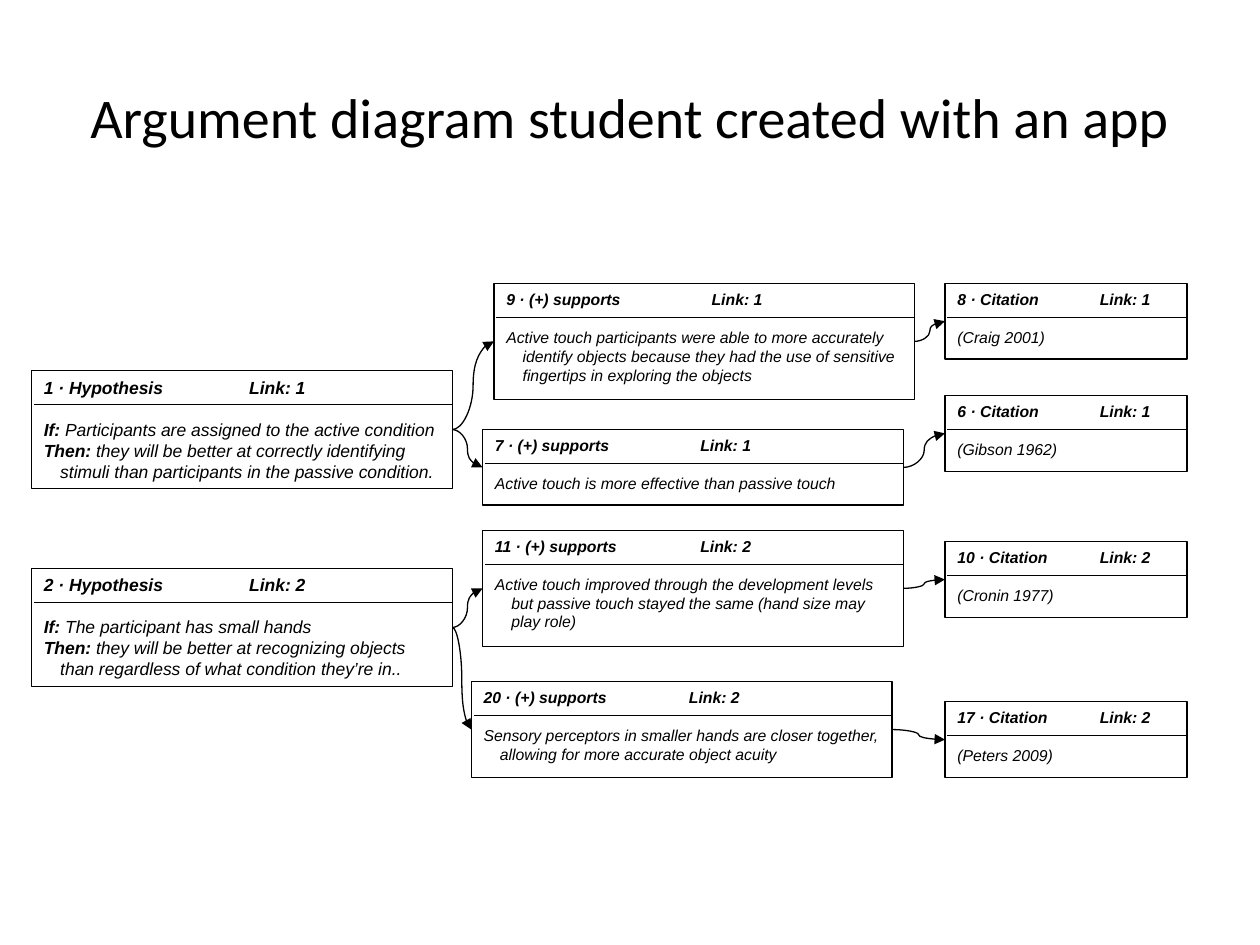
from dataclasses import dataclass

from lxml import etree
from pptx import Presentation
from pptx import util as u
from pptx.dml.color import RGBColor
from pptx.enum import shapes, text
from pptx.oxml import ns


@dataclass(frozen=True)
class Theme:
    ink: RGBColor = RGBColor(0, 0, 0)
    title_font: str = "Calibri"
    body_font: str = "Arial"
    title_size: int = 32
    hypothesis_size: int = 10
    detail_size: int = 9
    leading: float = 1.2
    line: float = 0.75


theme = Theme()


def write(para, words, *, size, font=theme.body_font, bold=False, italic=False):
    span = para.add_run()
    span.text = words
    span.font.name = font
    span.font.size = u.Pt(size)
    span.font.bold = bold
    span.font.italic = italic
    span.font.color.rgb = theme.ink


def draw_line(kind, left, top, right, bottom):
    line = page.shapes.add_connector(
        kind, u.Inches(left), u.Inches(top), u.Inches(right), u.Inches(bottom))
    line.line.color.rgb = theme.ink
    line.line.width = u.Pt(theme.line)
    etree.SubElement(line._element.spPr, ns.qn("a:effectLst"))
    return line


deck = Presentation()
deck.slide_width, deck.slide_height = u.Inches(10), u.Inches(7.5)
page = deck.slides.add_slide(deck.slide_layouts[5])

title = page.shapes.title
title.left, title.top = u.Inches(0.5), u.Inches(0.3)
title.width, title.height = u.Inches(9), u.Inches(1.25)
title.text_frame.vertical_anchor = text.MSO_ANCHOR.MIDDLE
heading = title.text_frame.paragraphs[0]
heading.alignment = text.PP_ALIGN.CENTER
write(heading, "Argument diagram student created with an app",
      size=theme.title_size, font=theme.title_font)

WIDE, NARROW = 3.34, 1.92
HEADER, DIVIDER_INSET, HANG = 0.27, 0.02, 0.13
CITATION_LEFT, CITATION_HEIGHT = 7.5, 0.6

hypotheses = [
    (1, 2.94, "Participants are assigned to the active condition",
     "they will be better at correctly identifying stimuli than participants in the passive condition."),
    (2, 4.51, "The participant has small hands",
     "they will be better at recognizing objects than regardless of what condition they’re in.."),
]
supports = [
    (9, 1, 3.92, 2.25, 0.92,
     "Active touch participants were able to more accurately identify objects because they had the use of sensitive fingertips in exploring the objects"),
    (7, 1, 3.83, 3.41, 0.6, "Active touch is more effective than passive touch"),
    (11, 2, 3.83, 4.21, 0.92,
     "Active touch improved through the development levels but passive touch stayed the same (hand size may play role)"),
    (20, 2, 3.74, 5.41, 0.76,
     "Sensory perceptors in smaller hands are closer together, allowing for more accurate object acuity"),
]
citations = [
    (8, 1, 2.25, "(Craig 2001)"),
    (6, 1, 3.14, "(Gibson 1962)"),
    (10, 2, 4.3, "(Cronin 1977)"),
    (17, 2, 5.57, "(Peters 2009)"),
]

cards = []
for number, top, condition, outcome in hypotheses:
    cards.append((number, f"{number} · Hypothesis\t\tLink: {number}", 0.25, top, WIDE, 0.94,
                  theme.hypothesis_size, [("If: ", condition), ("Then: ", outcome)]))
for number, link, left, top, height, claim in supports:
    cards.append((number, f"{number} · (+) supports\t\tLink: {link}", left, top, WIDE, height,
                  theme.detail_size, [("", claim)]))
for number, link, top, source in citations:
    cards.append((number, f"{number} · Citation\tLink: {link}", CITATION_LEFT, top, NARROW,
                  CITATION_HEIGHT, theme.detail_size, [("", source)]))

boxes = {}
for number, header, left, top, width, height, size, body in cards:
    box = page.shapes.add_shape(
        shapes.MSO_SHAPE.RECTANGLE,
        u.Inches(left), u.Inches(top), u.Inches(width), u.Inches(height))
    box.shadow.inherit = False
    box.fill.background()
    box.line.color.rgb = theme.ink
    box.line.width = u.Pt(theme.line)
    boxes[number] = box

    frame = box.text_frame
    frame.word_wrap = True
    frame.vertical_anchor = text.MSO_ANCHOR.TOP
    for index, (label, words) in enumerate([(header, "")] + body):
        para = frame.paragraphs[0] if index == 0 else frame.add_paragraph()
        para.alignment = text.PP_ALIGN.LEFT
        para.line_spacing = u.Pt(size * theme.leading)
        if index == 1:
            para.space_before = u.Pt(size * theme.leading)
        properties = para._p.get_or_add_pPr()
        properties.set("marL", str(u.Inches(HANG)))
        properties.set("indent", str(-u.Inches(HANG)))
        properties.set("defTabSz", str(u.Inches(0.5)))
        if label:
            write(para, label, size=size, bold=True, italic=True)
        if words:
            write(para, words, size=size, italic=True)

    draw_line(shapes.MSO_CONNECTOR.STRAIGHT, left + DIVIDER_INSET, top + HEADER,
              left + width, top + HEADER)

LEFT_SIDE, RIGHT_SIDE = 1, 3
for start, end in [(1, 9), (1, 7), (9, 8), (7, 6), (2, 11), (2, 20), (11, 10), (20, 17)]:
    arrow = draw_line(shapes.MSO_CONNECTOR.CURVE, 0, 0, 1, 1)
    arrow.begin_connect(boxes[start], RIGHT_SIDE)
    arrow.end_connect(boxes[end], LEFT_SIDE)
    etree.SubElement(arrow.line._get_or_add_ln(), ns.qn("a:tailEnd"), type="triangle")

deck.save("out.pptx")
